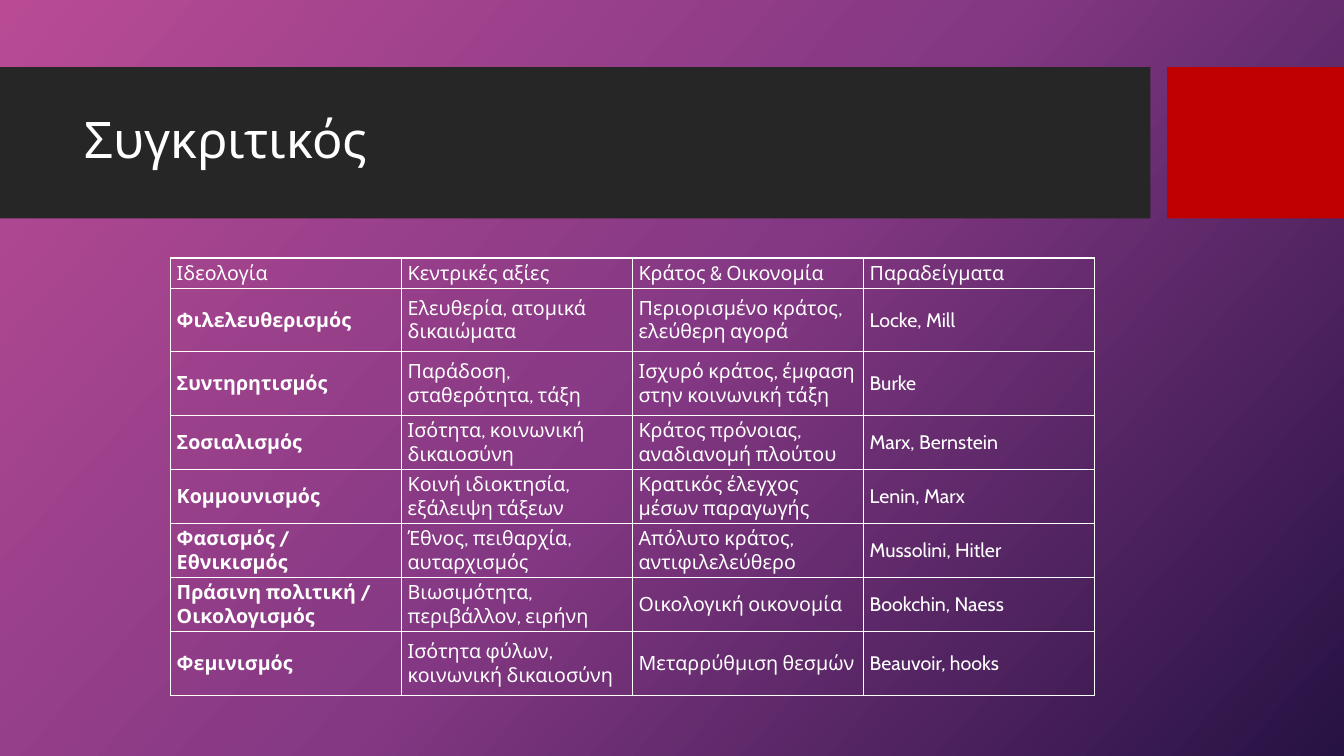
from copy import deepcopy
from dataclasses import dataclass

from lxml import etree
from pptx import Presentation
from pptx.dml.color import RGBColor
from pptx.enum.shapes import MSO_SHAPE
from pptx.enum.text import MSO_ANCHOR, MSO_AUTO_SIZE, PP_ALIGN
from pptx.oxml.ns import qn
from pptx.util import Pt

RECTANGLE = MSO_SHAPE.RECTANGLE
MIDDLE = MSO_ANCHOR.MIDDLE
NO_AUTOFIT = MSO_AUTO_SIZE.NONE
LEFT = PP_ALIGN.LEFT
TITLE_ONLY = 5


@dataclass(frozen=True)
class Theme:
    font: str = "Cabin"
    title_size: int = 36
    body_size: int = 14
    text: str = "FFFFFF"
    band: str = "262626"
    accent: str = "C00000"
    gradient: tuple = ((0, "B94B95"), (0.5, "843883"), (1, "261243"))
    gradient_angle: int = 42
    border: int = 1


THEME = Theme()
BAND_TOP, BAND_HEIGHT = 48, 108
TABLE_LEFT, TABLE_TOP, TABLE_HEIGHT = 121.75, 184.25, 311
COLUMN_WIDTH = 165
ROW_HEIGHTS = (18, 45.5, 45.5, 31.75, 31.75, 31.75, 31.75, 45.5)
IDEOLOGIES = (
    ("Ιδεολογία", "Κεντρικές αξίες", "Κράτος & Οικονομία", "Παραδείγματα"),
    ("Φιλελευθερισμός", "Ελευθερία, ατομικά δικαιώματα",
     "Περιορισμένο κράτος, ελεύθερη αγορά", "Locke, Mill"),
    ("Συντηρητισμός", "Παράδοση, σταθερότητα, τάξη",
     "Ισχυρό κράτος, έμφαση στην κοινωνική τάξη", "Burke"),
    ("Σοσιαλισμός", "Ισότητα, κοινωνική δικαιοσύνη",
     "Κράτος πρόνοιας, αναδιανομή πλούτου", "Marx, Bernstein"),
    ("Κομμουνισμός", "Κοινή ιδιοκτησία, εξάλειψη τάξεων",
     "Κρατικός έλεγχος μέσων παραγωγής", "Lenin, Marx"),
    ("Φασισμός / Εθνικισμός", "Έθνος, πειθαρχία, αυταρχισμός",
     "Απόλυτο κράτος, αντιφιλελεύθερο", "Mussolini, Hitler"),
    ("Πράσινη πολιτική / Οικολογισμός", "Βιωσιμότητα, περιβάλλον, ειρήνη",
     "Οικολογική οικονομία", "Bookchin, Naess"),
    ("Φεμινισμός", "Ισότητα φύλων, κοινωνική δικαιοσύνη",
     "Μεταρρύθμιση θεσμών", "Beauvoir, hooks"),
)


def set_attributes(target, values):
    for name, value in values.items():
        setattr(target, name, value)


def write_text(para, text, size, bold=False):
    span = para.add_run()
    span.text = text
    set_attributes(span.font, {"name": THEME.font, "size": Pt(size), "bold": bold})
    span.font.color.rgb = RGBColor.from_string(THEME.text)


def paint_background(page):
    fill = page.background.fill
    fill.gradient()
    fill.gradient_angle = 360 - THEME.gradient_angle
    stop_list = page.element.find(".//" + qn("a:gsLst"))
    stop_list.append(deepcopy(stop_list[-1]))
    for stop, (position, color) in zip(fill.gradient_stops, THEME.gradient):
        stop.position = position
        stop.color.rgb = RGBColor.from_string(color)


def add_band(page, left, width, color):
    band = page.shapes.add_shape(RECTANGLE, Pt(left), Pt(BAND_TOP), Pt(width), Pt(BAND_HEIGHT))
    band.shadow.inherit = False
    band.fill.solid()
    band.fill.fore_color.rgb = RGBColor.from_string(color)
    band.line.fill.background()


def place_title(page, text):
    """Format the title placeholder and bring it in front of the bands."""
    title = page.shapes.title
    set_attributes(title, {"left": Pt(53.25), "top": Pt(59), "width": Pt(756.75), "height": Pt(85)})
    set_attributes(title.text_frame, {
        "vertical_anchor": MIDDLE, "word_wrap": True, "auto_size": NO_AUTOFIT})
    para = title.text_frame.paragraphs[0]
    set_attributes(para, {"alignment": LEFT, "line_spacing": 0.9})
    write_text(para, text, THEME.title_size)
    page.shapes.element.append(title.element)


def add_borders(cell):
    properties = cell._tc.get_or_add_tcPr()
    for side in ("a:lnL", "a:lnR", "a:lnT", "a:lnB"):
        line = etree.SubElement(properties, qn(side), w=str(Pt(THEME.border)))
        fill = etree.SubElement(line, qn("a:solidFill"))
        etree.SubElement(fill, qn("a:srgbClr"), val=THEME.text)


def format_cell(cell, text, bold):
    set_attributes(cell, {
        "vertical_anchor": MIDDLE, "margin_left": Pt(4.5), "margin_right": Pt(4.5),
        "margin_top": Pt(2.25), "margin_bottom": Pt(2.25)})
    add_borders(cell)
    cell.fill.background()
    write_text(cell.text_frame.paragraphs[0], text, THEME.body_size, bold)


def add_grid(page, rows):
    column_count = len(rows[0])
    frame = page.shapes.add_table(
        len(rows), column_count, Pt(TABLE_LEFT), Pt(TABLE_TOP),
        Pt(COLUMN_WIDTH * column_count), Pt(TABLE_HEIGHT))
    table = frame.table
    set_attributes(table, {"first_row": False, "horz_banding": False})
    for row_index, (texts, height) in enumerate(zip(rows, ROW_HEIGHTS)):
        table.rows[row_index].height = Pt(height)
        for column_index, text in enumerate(texts):
            bold = row_index > 0 and column_index == 0
            format_cell(table.cell(row_index, column_index), text, bold)
    frame.height = Pt(TABLE_HEIGHT)


def main():
    deck = Presentation()
    set_attributes(deck, {"slide_width": Pt(960), "slide_height": Pt(540)})
    page = deck.slides.add_slide(deck.slide_layouts[TITLE_ONLY])
    paint_background(page)
    add_band(page, 0, 821.75, THEME.band)
    add_band(page, 833.75, 126.25, THEME.accent)
    place_title(page, "Συγκριτικός")
    add_grid(page, IDEOLOGIES)
    deck.save("out.pptx")


if __name__ == "__main__":
    main()
